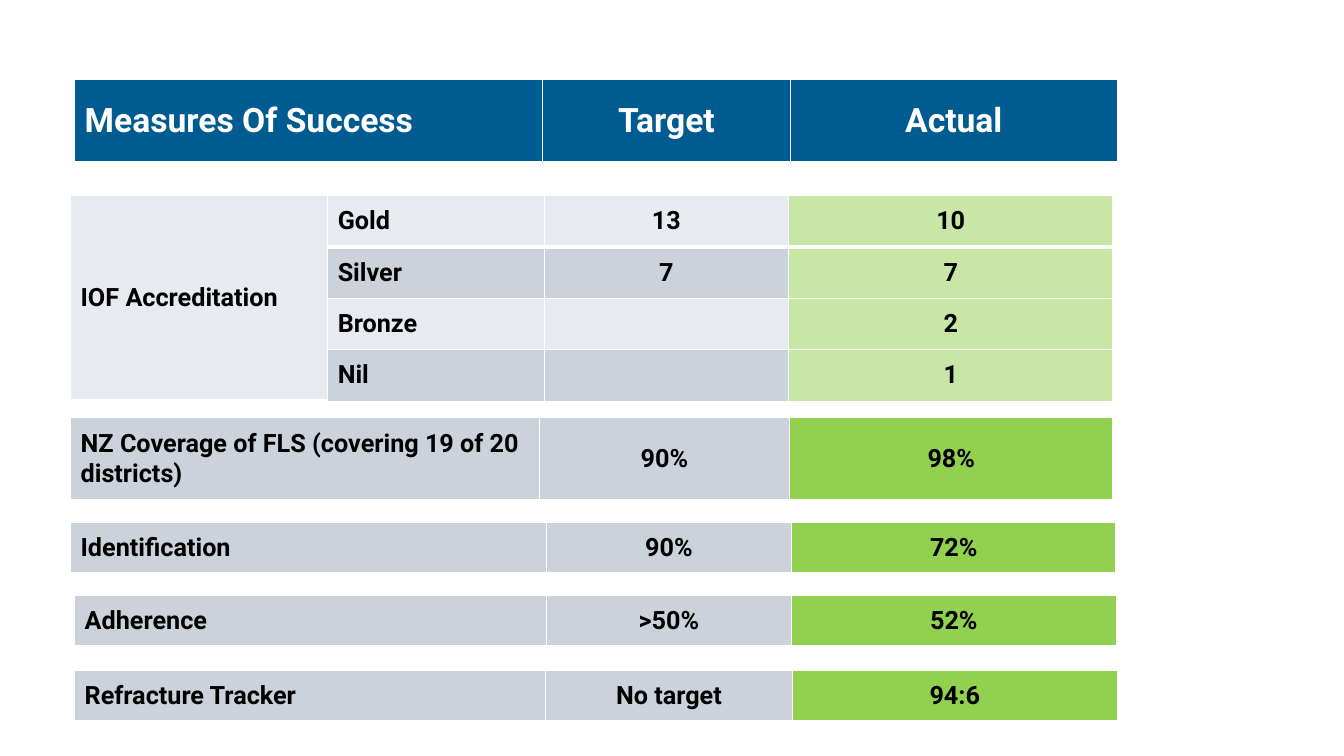
from dataclasses import dataclass

from lxml import etree
from pptx import Presentation
from pptx.dml.color import RGBColor
from pptx.enum import text
from pptx.oxml import ns
from pptx.util import Inches, Pt


@dataclass(frozen=True)
class Theme:
    font: str = "Roboto"
    heading_size: int = 24
    body_size: int = 18
    white: str = "FFFFFF"
    black: str = "000000"
    blue: str = "005C90"
    grey: str = "CBD2DB"
    light: str = "E7EAEE"
    band: str = "CCD2DB"
    green: str = "92D050"
    thin: int = 1
    thick: int = 3


THEME = Theme()

HEADING = ("Measures Of Success", "Target", "Actual")
ACCREDITATION = [
    ("IOF Accreditation", "Gold", "13", "10"),
    ("", "Silver", "7", "7"),
    ("", "Bronze", "", "2"),
    ("", "Nil", "", "1"),
]
MEASURES = [
    (0.7, 4.14, 0.83, (4.65, 2.48, 3.21),
     ("NZ Coverage of FLS (covering 19 of 20 districts)", "90%", "98%")),
    (0.7, 5.18, 0.51, (4.72, 2.43, 3.22), ("Identification", "90%", "72%")),
    (0.74, 5.91, 0.51, (4.68, 2.43, 3.22), ("Adherence", ">50%", "52%")),
    (0.74, 6.65, 0.51, (4.67, 2.45, 3.22), ("Refracture Tracker", "No target", "94:6")),
]


def add_grid(slide, left, top, row_height, widths, row_count):
    grid = slide.shapes.add_table(
        row_count, len(widths), Inches(left), Inches(top),
        Inches(sum(widths)), Inches(row_height * row_count)).table
    grid.first_row = grid.horz_banding = False
    for column, width in zip(grid.columns, widths):
        column.width = Inches(width)
    for row in grid.rows:
        row.height = Inches(row_height)
    return grid


def add_borders(cell, bottom):
    properties = cell._tc.get_or_add_tcPr()
    sides = {"lnL": THEME.thin, "lnR": THEME.thin, "lnT": THEME.thin, "lnB": bottom}
    for side, width in sides.items():
        line = etree.SubElement(properties, ns.qn(f"a:{side}"), w=str(Pt(width)))
        solid = etree.SubElement(line, ns.qn("a:solidFill"))
        etree.SubElement(solid, ns.qn("a:srgbClr"), val=THEME.white)


def fill_cell(cell, words, fill, centred, size=THEME.body_size,
              color=THEME.black, bottom=THEME.thick, opacity=100):
    add_borders(cell, bottom)
    cell.fill.solid()
    cell.fill.fore_color.rgb = RGBColor.from_string(fill)
    if opacity < 100:
        shade = cell._tc.tcPr.find(f"{ns.qn('a:solidFill')}/{ns.qn('a:srgbClr')}")
        etree.SubElement(shade, ns.qn("a:alpha"), val=str(opacity * 1000))
    cell.vertical_anchor = text.MSO_ANCHOR.MIDDLE
    cell.text_frame.text = words
    paragraph = cell.text_frame.paragraphs[0]
    paragraph.alignment = text.PP_ALIGN.CENTER if centred else text.PP_ALIGN.LEFT
    for run in paragraph.runs:
        run.font.name = THEME.font
        run.font.size = Pt(size)
        run.font.bold = True
        run.font.color.rgb = RGBColor.from_string(color)


def add_heading(slide):
    grid = add_grid(slide, 0.74, 0.79, 0.83, (4.64, 2.46, 3.24), 1)
    for column, words in enumerate(HEADING):
        fill_cell(grid.cell(0, column), words, THEME.blue, column > 0,
                  THEME.heading_size, THEME.white)


def add_accreditation(slide):
    grid = add_grid(slide, 0.7, 1.94, 0.51, (2.55, 2.15, 2.42, 3.22), len(ACCREDITATION))
    grid.cell(0, 0).merge(grid.cell(len(ACCREDITATION) - 1, 0))
    for row, level in enumerate(ACCREDITATION):
        band = THEME.band if row % 2 else THEME.light
        bottom = THEME.thin if row else THEME.thick
        for column, words in enumerate(level):
            cell = grid.cell(row, column)
            if cell.is_spanned:
                continue
            actual = column == len(level) - 1
            fill_cell(cell, words, THEME.green if actual else band, column > 1,
                      bottom=bottom, opacity=50 if actual else 100)


def add_measure(slide, left, top, height, widths, measure):
    grid = add_grid(slide, left, top, height, widths, 1)
    fills = (THEME.grey, THEME.grey, THEME.green)
    for column, (words, fill) in enumerate(zip(measure, fills)):
        fill_cell(grid.cell(0, column), words, fill, column > 0)


def main():
    deck = Presentation()
    deck.slide_width, deck.slide_height = Inches(13.33), Inches(7.5)
    slide = deck.slides.add_slide(deck.slide_layouts.get_by_name("Blank"))
    add_heading(slide)
    add_accreditation(slide)
    for measure in MEASURES:
        add_measure(slide, *measure)
    deck.save("out.pptx")


if __name__ == "__main__":
    main()
